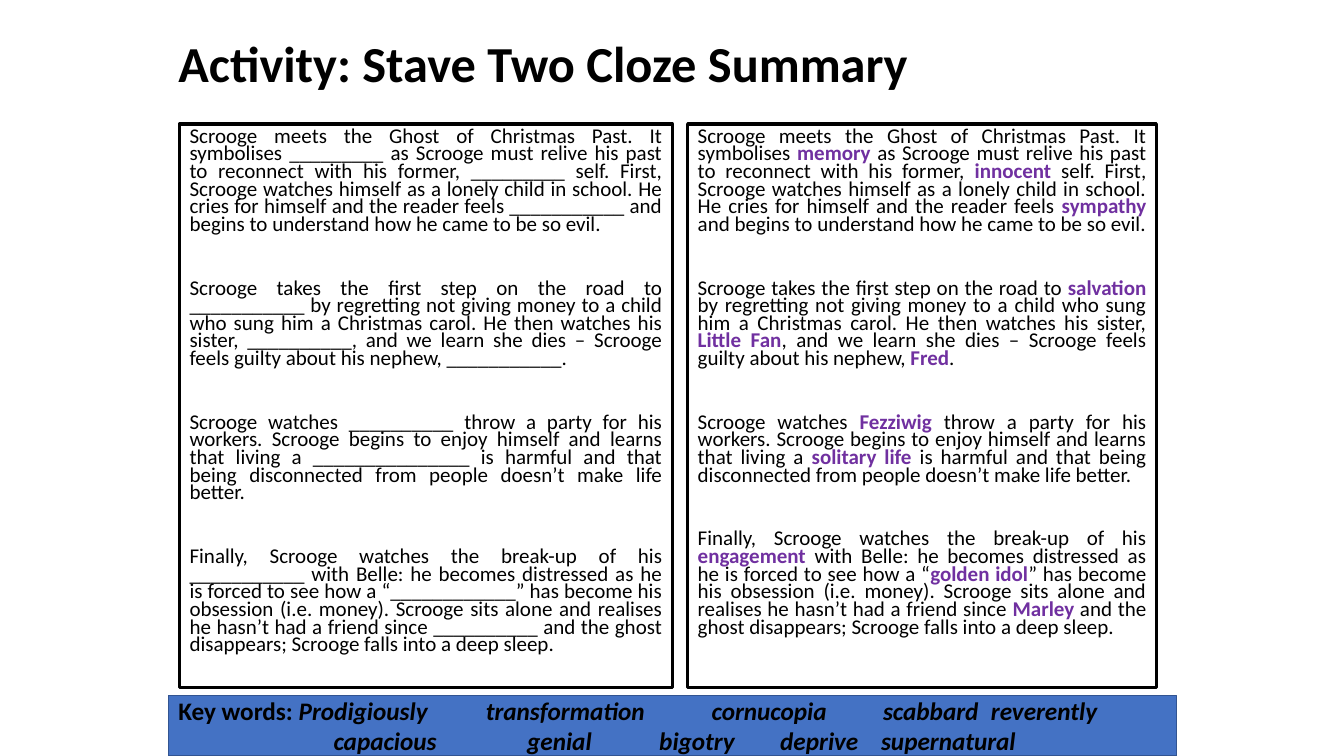
"""Build the Stave Two cloze summary slide with gapped and completed texts."""
from lxml import etree
from pptx import Presentation
from pptx.dml.color import RGBColor
from pptx.enum.shapes import MSO_SHAPE
from pptx.enum.text import MSO_ANCHOR, MSO_AUTO_SIZE, PP_ALIGN
from pptx.oxml.ns import qn
from pptx.util import Inches, Pt

RECTANGLE = MSO_SHAPE.RECTANGLE
TOP, MIDDLE = MSO_ANCHOR.TOP, MSO_ANCHOR.MIDDLE
LEFT, JUSTIFY = PP_ALIGN.LEFT, PP_ALIGN.JUSTIFY
NO_FIT = MSO_AUTO_SIZE.NONE

FONT = "Calibri"
COLOURS = {"text": "000000", "answer": "7030A0", "panel": "FFFFFF",
           "bar": "4472C4", "bar_edge": "325491"}

TITLE = "Activity: Stave Two Cloze Summary"

# Each gap pairs the answer with the length of its blank.
SUMMARY = [
    ["Scrooge meets the Ghost of Christmas Past. It symbolises ", ("memory", 9),
     " as Scrooge must relive his past to reconnect with his former, ", ("innocent", 9),
     " self. First, Scrooge watches himself as a lonely child in school. "
     "He cries for himself and the reader feels ", ("sympathy", 11),
     " and begins to understand how he came to be so evil."],
    ["Scrooge takes the first step on the road to ", ("salvation", 11),
     " by regretting not giving money to a child who sung him a Christmas carol. "
     "He then watches his sister, ", ("Little Fan", 10),
     ", and we learn she dies – Scrooge feels guilty about his nephew, ", ("Fred", 11), "."],
    ["Scrooge watches ", ("Fezziwig", 10),
     " throw a party for his workers. Scrooge begins to enjoy himself and learns "
     "that living a ", ("solitary life", 15),
     " is harmful and that being disconnected from people doesn’t make life better."],
    ["Finally, Scrooge watches the break-up of his ", ("engagement", 11),
     " with Belle: he becomes distressed as he is forced to see how a “", ("golden idol", 12),
     "” has become his obsession (i.e. money). Scrooge sits alone and realises "
     "he hasn’t had a friend since ", ("Marley", 10),
     " and the ghost disappears; Scrooge falls into a deep sleep."],
]

KEY_LABEL = "Key words: "
KEY_ROWS = [
    [("Prodigiously", None), ("transformation", 3.05), ("cornucopia", 5.29),
     ("scabbard", 6.99), ("reverently", 8.06)],
    [("capacious", 1.54), ("genial", 3.46), ("bigotry", 4.77),
     ("deprive", 5.97), ("supernatural", 6.97)],
]

PANEL_TOP, PANEL_HEIGHT = 1.23, 5.59
PANELS = [(1.78, 4.89, False), (6.82, 4.65, True)]


def colour(name):
    return RGBColor.from_string(COLOURS[name])


def style(font, size, bold=False):
    font.name, font.size, font.bold = FONT, Pt(size), bold
    font.color.rgb = colour("text")


def place(shape, left, top, width, height):
    shape.left, shape.top = Inches(left), Inches(top)
    shape.width, shape.height = Inches(width), Inches(height)


def outline(shape, fill, edge, width):
    shape.fill.solid()
    shape.fill.fore_color.rgb = colour(fill)
    shape.line.color.rgb = colour(edge)
    shape.line.width = Pt(width)


def next_paragraph(frame, index):
    return frame.add_paragraph() if index else frame.paragraphs[0]


def fill_panel(panel, completed):
    frame = panel.text_frame
    frame.auto_size, frame.vertical_anchor = NO_FIT, TOP
    for index, pieces in enumerate(SUMMARY):
        paragraph = next_paragraph(frame, index)
        paragraph.alignment, paragraph.line_spacing = JUSTIFY, 0.7
        paragraph.space_before = Pt(32.8 if index else 10)
        properties = paragraph._p.get_or_add_pPr()
        properties.set("marL", "0")
        properties.set("indent", "0")
        etree.SubElement(properties, qn("a:buNone"))
        style(paragraph.font, 15)
        for piece in pieces:
            run = paragraph.add_run()
            if isinstance(piece, str):
                run.text = piece
                continue
            answer, length = piece
            run.text = answer if completed else "_" * length
            if completed:
                run.font.bold = True
                run.font.color.rgb = colour("answer")


def fill_key_words(frame):
    frame.word_wrap, frame.vertical_anchor = True, MIDDLE
    for index, row in enumerate(KEY_ROWS):
        paragraph = next_paragraph(frame, index)
        paragraph.alignment = LEFT
        tabs = etree.SubElement(paragraph._p.get_or_add_pPr(), qn("a:tabLst"))
        for _, stop in row:
            if stop:
                etree.SubElement(tabs, qn("a:tab"), pos=str(Inches(stop)), algn="l")
        style(paragraph.font, 18, bold=True)
        if index == 0:
            paragraph.add_run().text = KEY_LABEL
        words = paragraph.add_run()
        words.text = "".join(("\t" if stop else "") + word for word, stop in row)
        words.font.italic = True


def main():
    deck = Presentation()
    deck.slide_width, deck.slide_height = Inches(13.33), Inches(7.5)
    slide = deck.slides.add_slide(deck.slide_layouts[3])
    title, *panels = list(slide.placeholders)[:3]

    place(title, 1.67, 0.03, 10, 1.25)
    title.text_frame.text = TITLE
    title.text_frame.auto_size = NO_FIT
    title.text_frame.vertical_anchor = MIDDLE
    heading = title.text_frame.paragraphs[0]
    heading.alignment, heading.line_spacing = LEFT, 0.9
    style(heading.font, 36, bold=True)

    for panel, (left, width, completed) in zip(panels, PANELS):
        place(panel, left, PANEL_TOP, width, PANEL_HEIGHT)
        outline(panel, "panel", "text", 2.25)
        fill_panel(panel, completed)

    key_bar = slide.shapes.add_shape(RECTANGLE, Inches(1.67), Inches(6.9), Inches(10), Inches(0.6))
    key_bar.shadow.inherit = False
    outline(key_bar, "bar", "bar_edge", 1)
    fill_key_words(key_bar.text_frame)

    deck.save("out.pptx")


if __name__ == "__main__":
    main()
